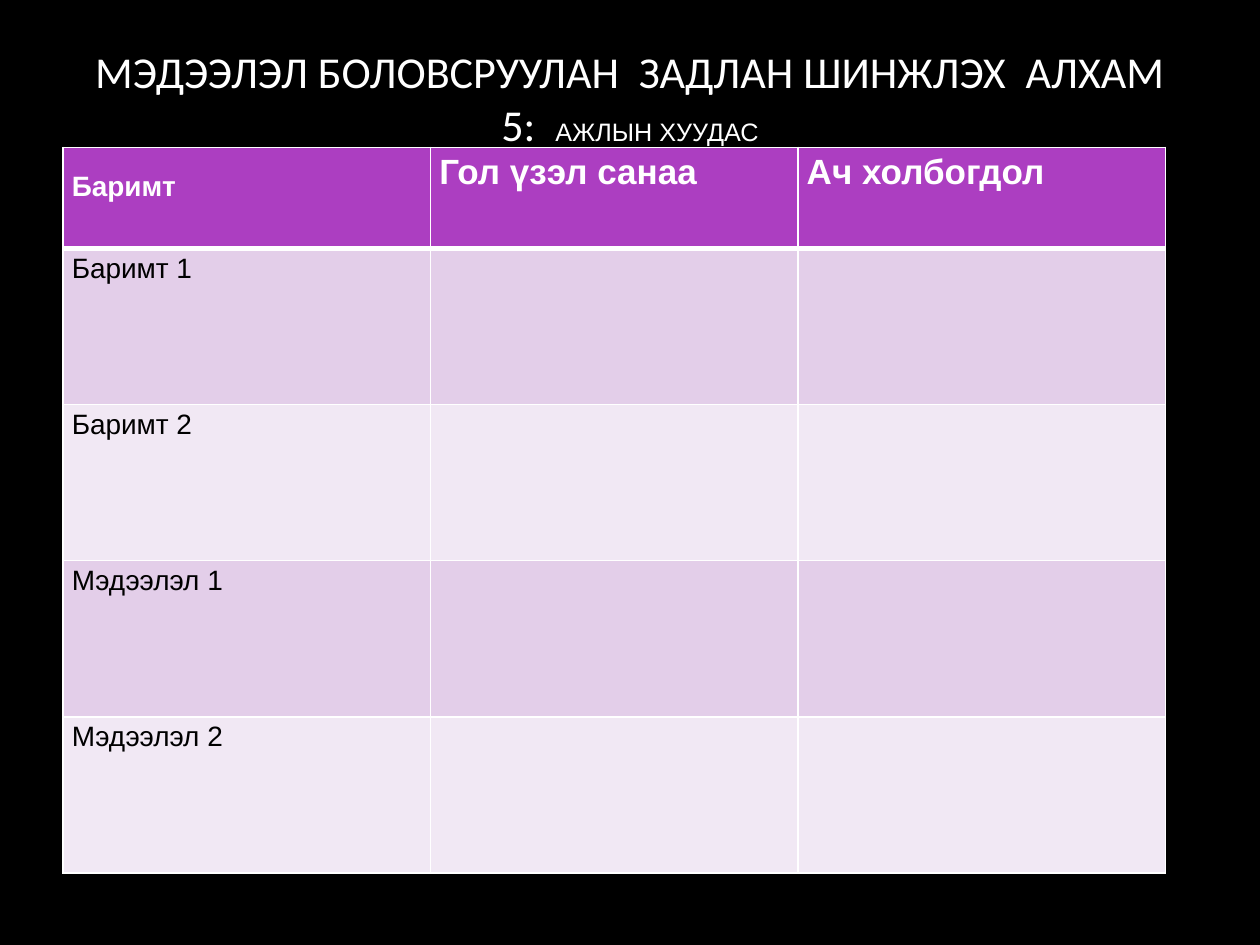
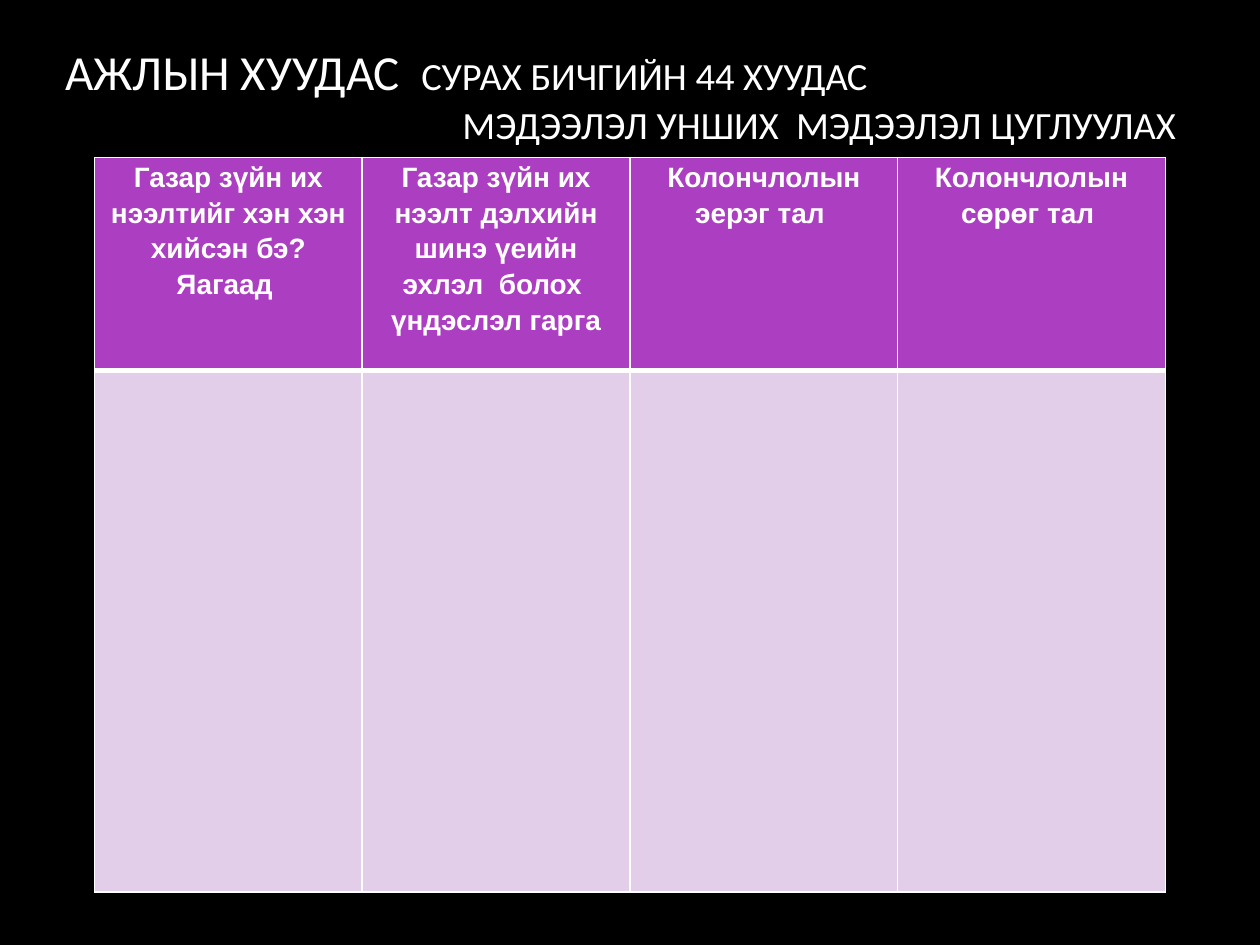
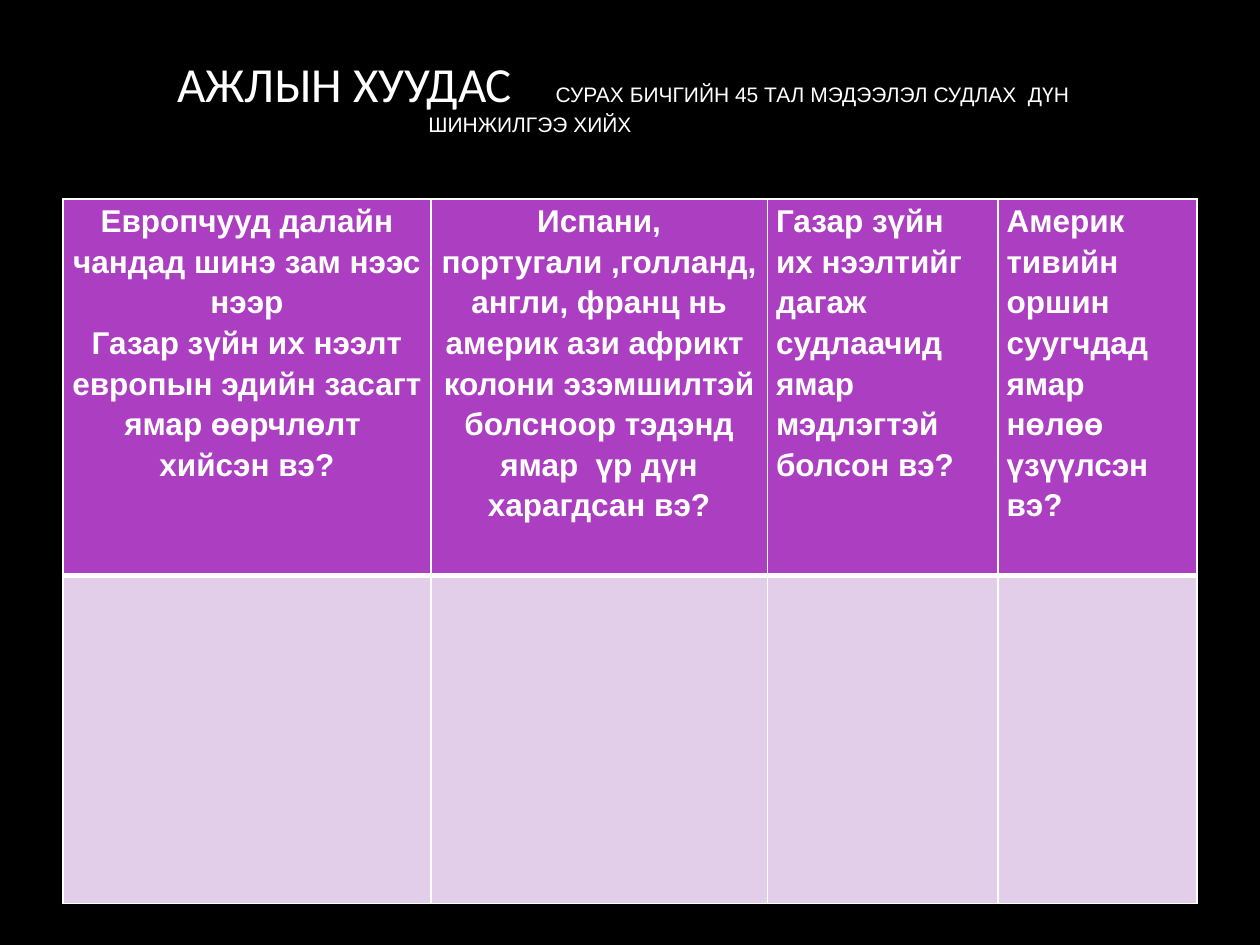
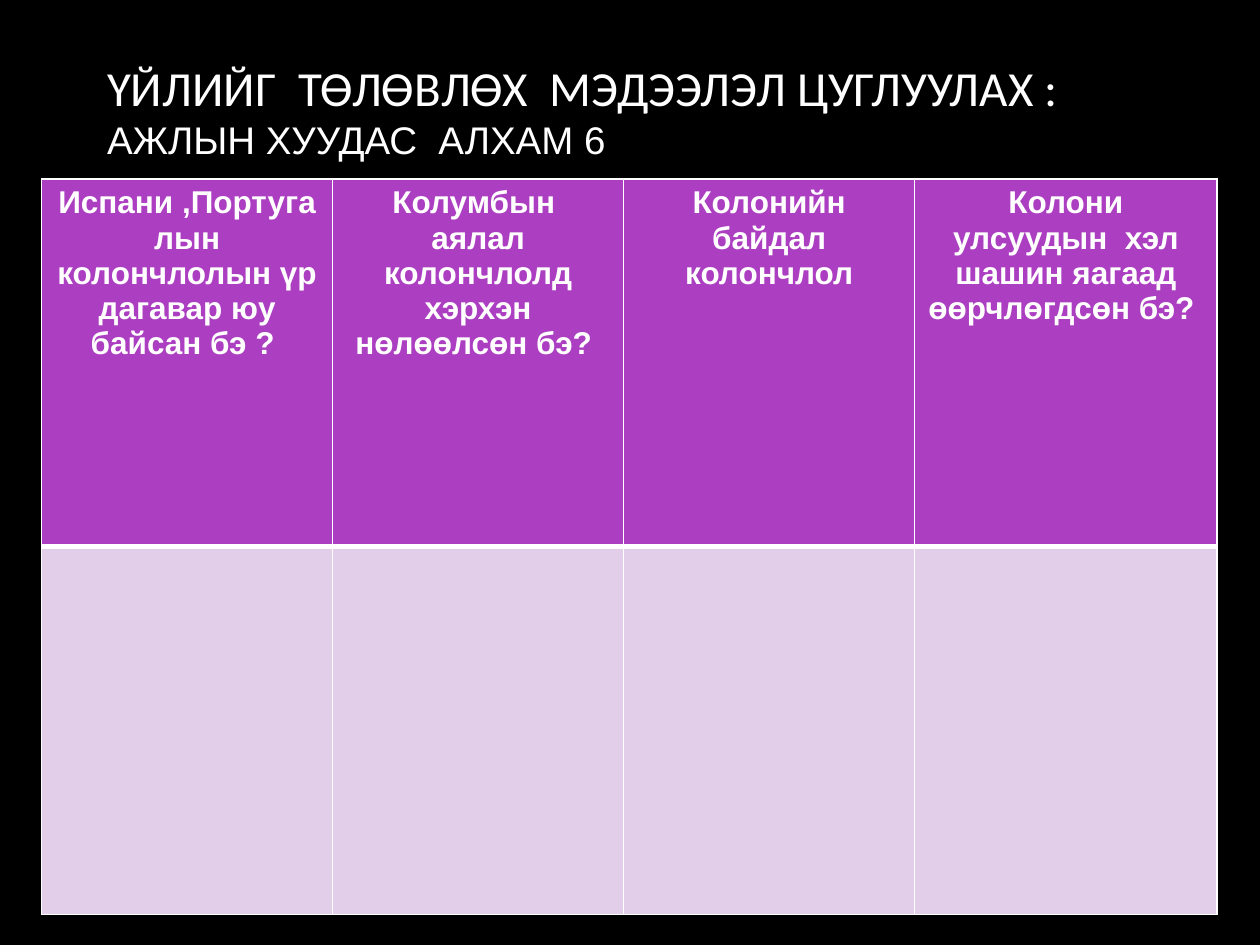
from lxml import etree
from pptx import Presentation
from pptx.dml.color import RGBColor
from pptx.enum import text
from pptx.oxml import ns
from pptx.util import Inches, Pt

COLORS = {
    "background": "000000",
    "light": "FFFFFF",
    "dark": "000000",
    "header": "AC3EC1",
    "band": "E3CEE9",
    "pale": "F1E8F4",
}
ALIGN = {"l": text.PP_ALIGN.LEFT, "c": text.PP_ALIGN.CENTER}


def rgb(name):
    return RGBColor.from_string(COLORS[name])


def write(p, content, size, font="Arial", color="light", bold=False):
    """Add one formatted run to a paragraph."""
    r = p.add_run()
    r.text = content
    r.font.name = font
    r.font.size = Pt(size)
    r.font.bold = bold
    r.font.color.rgb = rgb(color)


def border(cell, **widths):
    """Draw white cell edges; the widths are points keyed by L, R, T, B."""
    tc_pr = cell._tc.get_or_add_tcPr()
    for i, (side, width) in enumerate(widths.items()):
        ln = etree.Element(ns.qn(f"a:ln{side}"), w=str(Pt(width)))
        fill = etree.SubElement(ln, ns.qn("a:solidFill"))
        etree.SubElement(fill, ns.qn("a:srgbClr"), val=COLORS["light"])
        tc_pr.insert(i, ln)


class Deck:
    """Holds the shared style and the current slide."""

    def __init__(self):
        self.prs = Presentation()
        self.prs.slide_width, self.prs.slide_height = Inches(10), Inches(7.5)
        fill = self.prs.slide_master.background.fill
        fill.solid()
        fill.fore_color.rgb = rgb("background")
        self.s = None

    def slide(self):
        self.s = self.prs.slides.add_slide(self.prs.slide_layouts[5])

    def title(self, box, lines, align="l", indents=(0, 0), inset=0.1, tab=None):
        """Each line is a list of (text, size, font) runs."""
        sp = self.s.shapes.title
        sp.left, sp.top, sp.width, sp.height = map(Inches, box)
        tf = sp.text_frame
        tf.word_wrap = True
        tf.auto_size = text.MSO_AUTO_SIZE.NONE
        tf.vertical_anchor = text.MSO_ANCHOR.MIDDLE
        tf.margin_left = Inches(inset)
        for i, (runs, indent) in enumerate(zip(lines, indents)):
            p = tf.paragraphs[0] if i == 0 else tf.add_paragraph()
            p.alignment = ALIGN[align]
            p_pr = p._p.get_or_add_pPr()
            p_pr.set("marL", str(Inches(indent)))
            p_pr.set("indent", "0")
            if tab:
                tabs = etree.SubElement(p_pr, ns.qn("a:tabLst"))
                etree.SubElement(tabs, ns.qn("a:tab"), pos=str(Inches(tab)), algn="l")
            for content, size, font in runs:
                write(p, content, size, font)

    def table(self, left, top, cols, rows):
        """Place a grid of the given column widths and row heights."""
        frame = self.s.shapes.add_table(
            len(rows), len(cols), Inches(left), Inches(top),
            Inches(sum(cols)), Inches(sum(rows)))
        tbl = frame.table
        for col, width in zip(tbl.columns, cols):
            col.width = Inches(width)
        for i, height in enumerate(rows):
            tbl.rows[i].height = Inches(height)
            shade = "header" if i == 0 else "band" if i % 2 else "pale"
            for cell in tbl.rows[i].cells:
                cell.fill.solid()
                cell.fill.fore_color.rgb = rgb(shade)
                border(cell, L=1, R=1, T=3 if i == 1 else 1, B=3 if i == 0 else 1)
        return tbl

    def cell(self, cell, content, size, align="l", spacing=1.15,
             margins=(0.07, 0), **style):
        """Fill a cell; each line of the content is a paragraph."""
        cell.margin_left = cell.margin_right = Inches(margins[0])
        cell.margin_top = cell.margin_bottom = Inches(margins[1])
        tf = cell.text_frame
        for i, line in enumerate(content.split("\n")):
            p = tf.paragraphs[0] if i == 0 else tf.add_paragraph()
            p.alignment = ALIGN[align]
            if spacing:
                p.line_spacing = spacing
            write(p, line, size, **style)

    def headers(self, tbl, labels, sizes, aligns, **layout):
        for cell, label, size, align in zip(tbl.rows[0].cells, labels, sizes, aligns):
            self.cell(cell, label, size, align, bold=True, **layout)


def main():
    deck = Deck()

    # Step 5 worksheet: facts and information
    deck.slide()
    deck.title((0.5, 0.3, 9, 0.95), [
        [("МЭДЭЭЛЭЛ БОЛОВСРУУЛАН  ЗАДЛАН ШИНЖЛЭХ  АЛХАМ", 25.2, "Calibri")],
        [("5:  ", 25.2, "Calibri"), ("АЖЛЫН ХУУДАС", 14.4, "Arial")],
    ], align="c")
    tbl = deck.table(0.5, 1.17, [8.75 / 3] * 3, [0.8] + [1.24] * 4)
    deck.headers(tbl, ["Баримт", "Гол үзэл санаа", "Ач холбогдол"], [16, 20, 20], "lll")
    write(tbl.cell(0, 0).text_frame.paragraphs[0], " ", 26, bold=True)
    for i, label in enumerate(["Баримт 1", "Баримт 2", "Мэдээлэл 1", "Мэдээлэл 2"], 1):
        deck.cell(tbl.cell(i, 0), label, 16, color="dark")

    # Worksheet for page 44
    deck.slide()
    deck.title((0.33, 0.25, 9.33, 1), [
        [("АЖЛЫН ХУУДАС  ", 28, "Calibri"), ("СУРАХ БИЧГИЙН 44 ХУУДАС", 22, "Calibri")],
        [("МЭДЭЭЛЭЛ УНШИХ  МЭДЭЭЛЭЛ ЦУГЛУУЛАХ", 22, "Calibri")],
    ], indents=(0.09, 3.24))
    tbl = deck.table(0.75, 1.25, [8.5 / 4] * 4, [1.69, 4.14])
    deck.headers(tbl, [
        "Газар зүйн их нээлтийг хэн хэн хийсэн бэ? Яагаад ",
        "Газар зүйн их нээлт дэлхийн шинэ үеийн эхлэл  болох  үндэслэл гарга",
        "Колончлолын эерэг тал ",
        "Колончлолын сөрөг тал ",
    ], [16] * 4, "cccc")

    # Worksheet for page 45
    deck.slide()
    deck.title((0.75, 0.17, 8.5, 1.17), [
        [("АЖЛЫН ХУУДАС\t", 28, "Calibri"),
         ("СУРАХ БИЧГИЙН 45 ТАЛ МЭДЭЭЛЭЛ СУДЛАХ  ДҮН", 12, "Arial")],
        [("ШИНЖИЛГЭЭ ХИЙХ", 12, "Arial")],
    ], indents=(0, 1.99), inset=0.66, tab=3.09)
    tbl = deck.table(0.5, 1.58, [2.92, 2.67, 1.83, 1.58], [2.99, 2.6])
    deck.headers(tbl, [
        "Европчууд далайн чандад шинэ зам нээс\nнээр\n"
        "Газар зүйн их нээлт европын эдийн засагт ямар өөрчлөлт  хийсэн вэ?",
        "Испани, португали ,голланд, англи, франц нь америк ази африкт  колони "
        "эзэмшилтэй болсноор тэдэнд ямар  үр дүн харагдсан вэ?",
        "Газар зүйн их нээлтийг\nдагаж судлаачид ямар мэдлэгтэй болсон вэ?",
        "Америк тивийн оршин суугчдад ямар нөлөө үзүүлсэн вэ?",
    ], [18] * 4, "ccll")

    # Step 6 worksheet: planning
    deck.slide()
    deck.title((0.75, 0.33, 8.5, 1.08), [
        [("ҮЙЛИЙГ  ТӨЛӨВЛӨХ  МЭДЭЭЛЭЛ ЦУГЛУУЛАХ :", 28, "Calibri")],
        [("АЖЛЫН ХУУДАС  АЛХАМ 6", 22, "Arial")],
    ])
    tbl = deck.table(0.33, 1.42, [2.31] * 3 + [2.4], [2.92] * 2)
    deck.headers(tbl, [
        "Испани ,Португалын колончлолын үр дагавар юу байсан бэ ? ",
        "Колумбын  аялал колончлолд хэрхэн нөлөөлсөн бэ? ",
        "Колонийн байдал колончлол",
        "Колони улсуудын  хэл шашин яагаад өөрчлөгдсөн бэ? ",
    ], [18] * 4, "cccc", spacing=None, margins=(0.1, 0.05))

    deck.prs.save("out.pptx")


if __name__ == "__main__":
    main()
